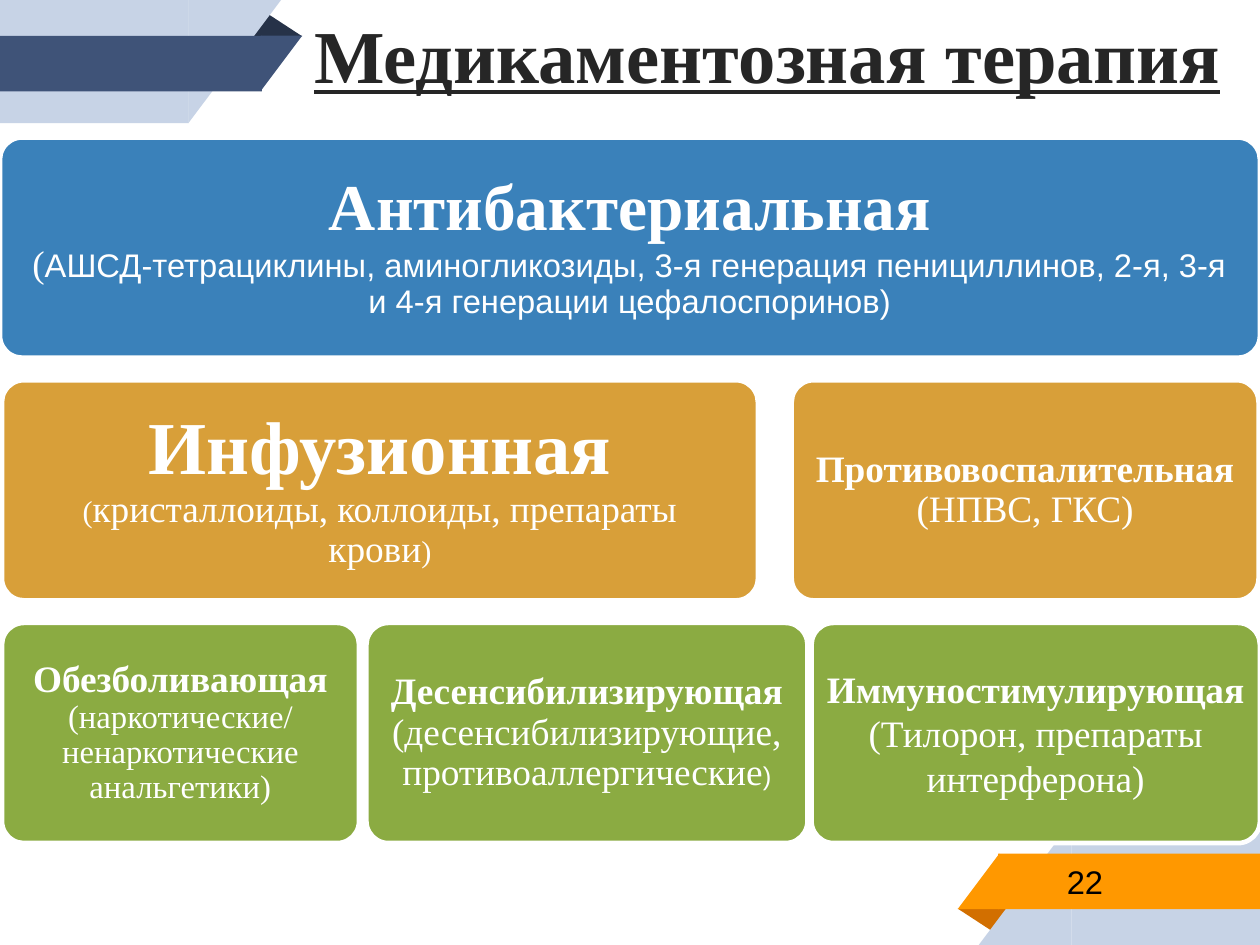
from dataclasses import dataclass

from pptx import Presentation
from pptx import util as u
from pptx.dml.color import RGBColor
from pptx.enum import shapes, text
from pptx.oxml.ns import qn

SHAPE = shapes.MSO_SHAPE
W, H = 19.05, 14.29


def font(size, name="Times New Roman", bold=False, underline=False):
    return dict(size=u.Pt(size), name=name, bold=bold, underline=underline)


@dataclass(frozen=True)
class Theme:
    white = "FFFFFF"
    black = "000000"
    title = "262626"
    pale = "C7D3E6"
    navy, navy_fold = "3F5378", "263248"
    orange, orange_fold = "FF9800", "D26F00"
    blue, gold, green = "3A81BA", "D89F39", "8BAB42"
    fonts = {
        "title": font(32, bold=True, underline=True),
        "hero": font(32, bold=True),
        "lead": font(28, bold=True),
        "head": font(16, bold=True),
        "body": font(16),
        "note": font(14),
        "paren": font(13),
        "sans": font(14, "Arial"),
        "tail": font(11, "Arial"),
    }


class Deck:
    def __init__(self, theme):
        self.t = theme
        self.prs = Presentation()
        self.prs.slide_width, self.prs.slide_height = u.Cm(W), u.Cm(H)
        self.s = self.prs.slides.add_slide(self.prs.slide_layouts[6])

    def shape(self, kind, box, fill):
        sp = self.s.shapes.add_shape(kind, *map(u.Cm, box))
        sp.shadow.inherit = False
        sp.fill.solid()
        sp.fill.fore_color.rgb = RGBColor.from_string(fill)
        sp.line.fill.background()
        return sp

    def ribbon(self, band, fold, turned):
        """Corner ribbon at bottom right, or turned half round to top left."""
        parts = [
            (SHAPE.ISOSCELES_TRIANGLE, (14.48, 13.74, 0.81, 0.36), fold),
            (SHAPE.RECTANGLE, (16.2, 12.43, 2.85, 1.86), self.t.pale),
            (SHAPE.RIGHT_TRIANGLE, (14.8, 12.43, 1.4, 1.86), self.t.pale),
            (SHAPE.RECTANGLE, (15.09, 12.91, 3.96, 0.84), band),
            (SHAPE.RIGHT_TRIANGLE, (14.48, 12.91, 0.63, 0.84), band),
        ]
        for kind, (x, y, w, h), fill in parts:
            if turned:
                x, y = W - x - w, H - y - h
            sp = self.shape(kind, (x, y, w, h), fill)
            is_fold = kind == SHAPE.ISOSCELES_TRIANGLE
            if is_fold:
                sp.adjustments[0] = 0.32
            if kind == SHAPE.RIGHT_TRIANGLE:
                sp._element.spPr.find(qn("a:xfrm")).set("flipH", "1")
            sp.rotation = 180 if turned != is_fold else 0

    def fill_text(self, sp, paragraphs, color, inset, align, spacing=None):
        tf = sp.text_frame
        frame = dict(word_wrap=True, vertical_anchor=text.MSO_ANCHOR.MIDDLE)
        for side in ("left", "top", "right", "bottom"):
            frame["margin_" + side] = u.Cm(inset)
        for key, value in frame.items():
            setattr(tf, key, value)
        for i, runs in enumerate(paragraphs):
            p = tf.add_paragraph() if i else tf.paragraphs[0]
            p.alignment, p.line_spacing = align, spacing
            for words, style in runs:
                for j, line in enumerate(words.split("\n")):
                    if j:
                        p.add_line_break()
                    if line:
                        self.add_words(p, line, style, color)

    def add_words(self, p, words, style, color):
        r = p.add_run()
        r.text = words
        for key, value in self.t.fonts[style].items():
            setattr(r.font, key, value)
        r.font.color.rgb = RGBColor.from_string(color)

    def label(self, box, words, style, color, inset):
        sp = self.s.shapes.add_textbox(*map(u.Cm, box))
        self.fill_text(sp, [[(words, style)]], color, inset,
                       text.PP_ALIGN.LEFT)

    def card(self, box, fill, paragraphs, inset, spacing):
        sp = self.shape(SHAPE.ROUNDED_RECTANGLE, box, fill)
        sp.adjustments[0] = 0.1
        sp.line.color.rgb = RGBColor.from_string(self.t.white)
        sp.line.width = u.Pt(2)
        self.fill_text(sp, paragraphs, self.t.white, inset,
                       text.PP_ALIGN.CENTER, spacing)


def main():
    t = Theme()
    d = Deck(t)

    # Corner ribbons and slide number
    d.ribbon(t.orange, t.orange_fold, turned=False)
    d.ribbon(t.navy, t.navy_fold, turned=True)
    d.label((15.88, 12.88, 3.1, 0.89), "22", "sans", t.black, 0.25)

    # Therapy cards: row, left, width, colour, text, inset, line spacing
    cards = [
        (0, 0, 19.05, t.blue, [
            [("Антибактериальная", "lead")],
            [("(", "body"),
             ("АШСД-тетрациклины, аминогликозиды, 3-я генерация "
              "пенициллинов, 2-я, 3-я и 4-я генерации цефалоспоринов)",
              "sans")]], 0.3, 0.9),
        (1, 0.03, 11.43, t.gold, [
            [("Инфузионная\n", "hero"), ("(", "paren"),
             ("кристаллоиды, коллоиды, препараты крови", "body"),
             (")", "paren")]], 0.33, 0.9),
        (2, 0.03, 5.4, t.green, [
            [("Обезболивающая\n", "head"),
             ("(наркотические/\nненаркотические анальгетики)", "note")]],
         0.18, 0.9),
        (2, 5.54, 6.67, t.green, [
            [("Десенсибилизирующая\n", "head"),
             ("(десенсибилизирующие, противоаллергические", "body"),
             (")", "tail")]], 0.18, 0.9),
        (1, 11.97, 7.06, t.gold, [
            [("Противовоспалительная\n", "head"),
             ("(НПВС, ГКС)", "body")]], 0.18, 0.9),
        (2, 12.27, 6.78, t.green, [
            [("Иммуностимулирующая", "head")],
            [("(Тилорон, препараты интерферона)", "body")]], 0.08, 1.0),
    ]
    top, pitch, height = 2.08, 3.67, 3.33
    for row, left, width, fill, paragraphs, inset, spacing in cards:
        d.card((left, top + row * pitch, width, height), fill,
               paragraphs, inset, spacing)

    # Title
    d.label((4.5, 0, 14.55, 1.63), "Медикаментозная терапия", "title",
            t.title, 0.25)

    d.prs.save("out.pptx")


if __name__ == "__main__":
    main()
